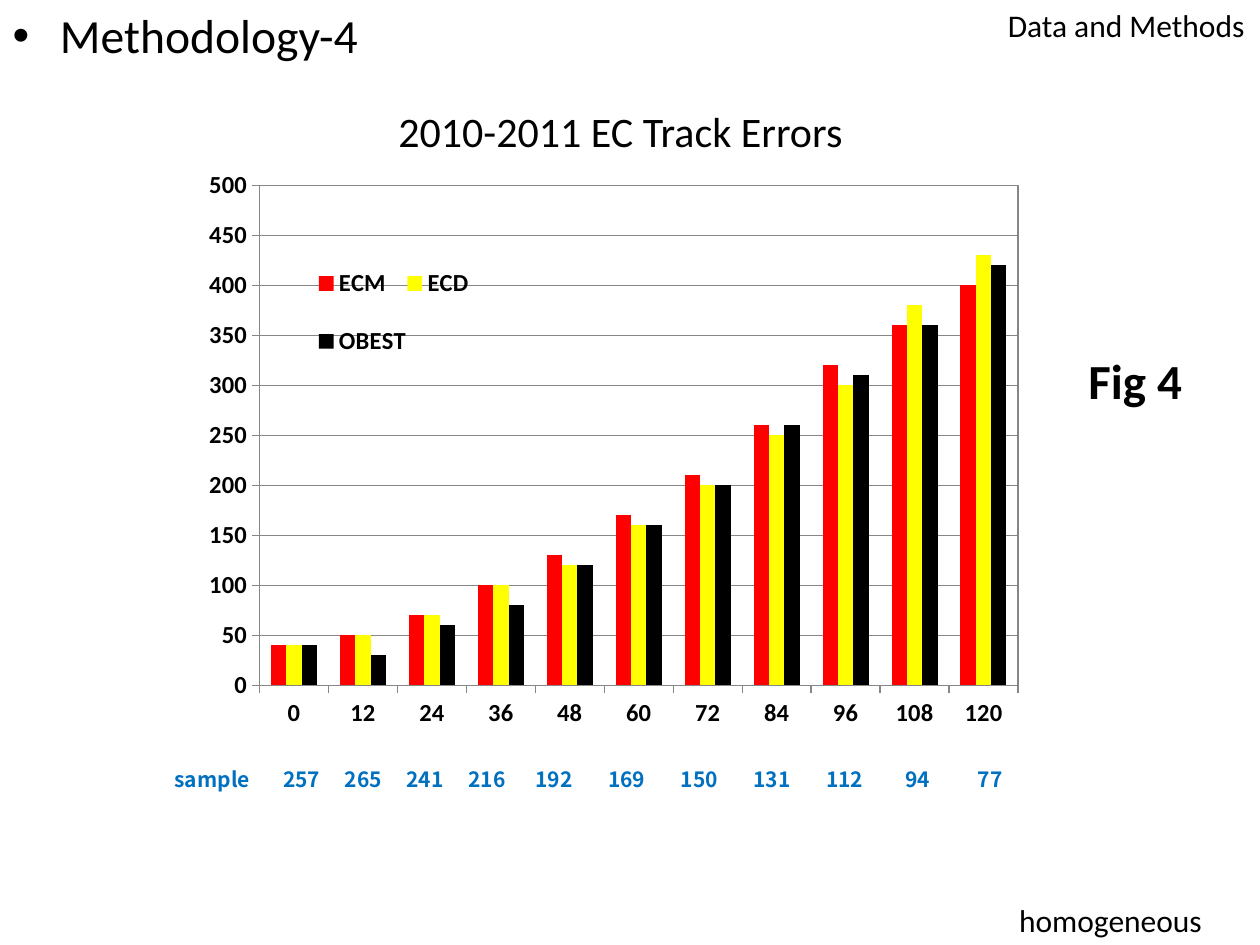
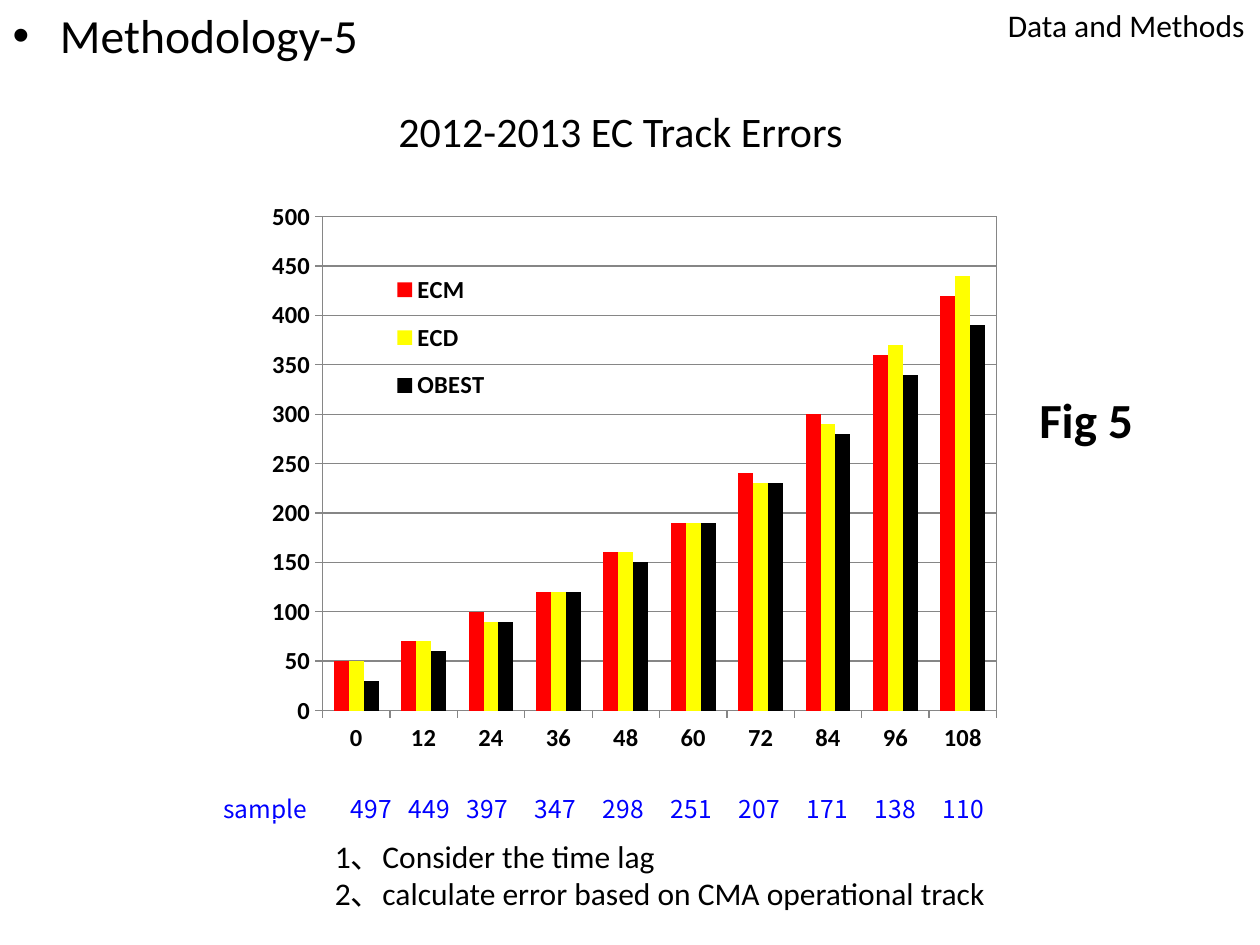
import pptx
import pptx.chart.data
import pptx.dml.color
import pptx.enum.chart
import pptx.enum.text
import pptx.oxml
import pptx.util

COLORS = {
    "ink": "000000",
    "grid": "868686",
    "ECM": "FF0000",
    "ECD": "FFFF00",
    "OBEST": "000000",
    "sample_bold": "0070C0",
    "sample_plain": "0000FF",
}
FONT = "Calibri"
TABLE_FONT = "Noto Sans CJK SC"
SECTION = "Data and Methods"
HOUR_STEP = 12
ALIGN = pptx.enum.text.PP_ALIGN

SLIDES = [
    {
        "heading": "Methodology-4",
        "title": "2010-2011 EC Track Errors",
        "figure": ("Fig 4", (8.54, 2.73, 1.02, 0.57)),
        "notes": (["homogeneous"], (7.99, 7.1, 1.73, 0.4)),
        "chart_box": (1.22, 1.15, 7.4, 5.04),
        "plot": (0.84, 0.32, 6.02, 3.97),
        "legend": (1.3, 0.76, 1.21, 1.14),
        "errors": {
            "ECM": [40, 50, 70, 100, 130, 170, 210, 260, 320, 360, 400],
            "ECD": [40, 50, 70, 100, 120, 160, 200, 250, 300, 380, 430],
            "OBEST": [40, 30, 60, 80, 120, 160, 200, 260, 310, 360, 420],
        },
        "samples": [257, 265, 241, 216, 192, 169, 150, 131, 112, 94, 77],
        "table": {"box": (1.22, 5.8, 6.93, 0.75), "label": 0.93,
                  "narrow": (4, 0.49), "size": 12, "bold": True,
                  "color": "sample_bold", "aligns": (ALIGN.CENTER, ALIGN.CENTER)},
    },
    {
        "heading": "Methodology-5",
        "title": "2012-2013 EC Track Errors",
        "figure": ("Fig 5", (8.15, 3.04, 1.02, 0.57)),
        "notes": (["1、Consider the time lag",
                   "2、calculate error based on CMA operational track"],
                  (2.56, 6.59, 5.42, 0.71)),
        "chart_box": (1.85, 1.47, 6.61, 4.78),
        "plot": (0.71, 0.25, 5.35, 3.92),
        "legend": (1.22, 0.57, 0.86, 1.28),
        "errors": {
            "ECM": [50, 70, 100, 120, 160, 190, 240, 300, 360, 420],
            "ECD": [50, 70, 90, 120, 160, 190, 230, 290, 370, 440],
            "OBEST": [30, 60, 90, 120, 150, 190, 230, 280, 340, 390],
        },
        "samples": [497, 449, 397, 347, 298, 251, 207, 171, 138, 110],
        "table": {"box": (1.77, 6.27, 6.04, 0.23), "label": 0.88,
                  "narrow": (3, 0.46), "size": 14, "bold": False,
                  "color": "sample_plain", "aligns": (ALIGN.LEFT, ALIGN.RIGHT)},
    },
]


def inches(values):
    return [pptx.util.Inches(value) for value in values]


def rgb(name):
    return pptx.dml.color.RGBColor.from_string(COLORS[name])


def style_font(font, size, bold=False, color="ink", name=FONT):
    font.name = name
    font.size = pptx.util.Pt(size)
    font.bold = bold
    font.color.rgb = rgb(color)


def style_paragraphs(frame, size, align=None, **look):
    for para in frame.paragraphs:
        para.alignment = align
        for span in para.runs:
            style_font(span.font, size, **look)


def fill_placeholder(shape, box, text, size, anchor, align=None):
    shape.left, shape.top, shape.width, shape.height = inches(box)
    frame = shape.text_frame
    frame.text = text
    frame.auto_size = pptx.enum.text.MSO_AUTO_SIZE.NONE
    frame.vertical_anchor = anchor
    style_paragraphs(frame, size, align)


def add_text(page, lines, box, size, bold=False, wrap=True):
    frame = page.shapes.add_textbox(*inches(box)).text_frame
    frame.word_wrap = wrap
    frame.text = "\n".join(lines)
    style_paragraphs(frame, size, bold=bold)


def chart_xml(tag, content):
    namespaces = pptx.oxml.ns.nsdecls("c", "a")
    return pptx.oxml.parse_xml(f"<c:{tag} {namespaces}>{content}</c:{tag}>")


def set_layout(parent, box, chart_box, position, target=""):
    for previous in parent.findall(pptx.oxml.ns.qn("c:layout")):
        parent.remove(previous)
    modes = '<c:xMode val="edge"/><c:yMode val="edge"/>'
    sizes = "".join(f'<c:{key} val="{length / whole:.4f}"/>'
                    for key, length, whole in zip("xywh", box, chart_box[2:] * 2))
    parent.insert(position, chart_xml(
        "layout", f"<c:manualLayout>{target}{modes}{sizes}</c:manualLayout>"))


def style_line(line):
    line.color.rgb = rgb("grid")
    line.width = pptx.util.Pt(0.75)


def add_error_chart(page, content):
    data = pptx.chart.data.CategoryChartData()
    data.categories = [str(HOUR_STEP * i) for i in range(len(content["samples"]))]
    for name, values in content["errors"].items():
        data.add_series(name, values)
    chart_box = content["chart_box"]
    chart = page.shapes.add_chart(
        pptx.enum.chart.XL_CHART_TYPE.COLUMN_CLUSTERED, *inches(chart_box), data).chart
    style_font(chart.font, 14, bold=True)
    chart.has_title = False

    plot = chart.plots[0]
    plot.vary_by_categories = False
    plot.gap_width = 150
    plot.overlap = 0
    for series in plot.series:
        series.format.fill.solid()
        series.format.fill.fore_color.rgb = rgb(series.name)

    for axis in (chart.category_axis, chart.value_axis):
        axis.major_tick_mark = pptx.enum.chart.XL_TICK_MARK.OUTSIDE
        style_line(axis.format.line)
    errors = chart.value_axis
    errors.minimum_scale, errors.maximum_scale, errors.major_unit = 0, 500, 50
    errors.has_major_gridlines = True
    style_line(errors.major_gridlines.format.line)

    chart.has_legend = True
    chart.legend.position = pptx.enum.chart.XL_LEGEND_POSITION.RIGHT
    chart.legend.include_in_layout = False
    style_font(chart.legend.font, 14, bold=True)
    set_layout(chart.legend._element, content["legend"], chart_box, 1)
    area = plot._element.getparent()
    set_layout(area, content["plot"], chart_box, 0, '<c:layoutTarget val="inner"/>')
    area.append(chart_xml(
        "spPr", '<a:noFill/><a:ln w="9525"><a:solidFill>'
        f'<a:srgbClr val="{COLORS["grid"]}"/></a:solidFill></a:ln>'))
    area.getparent().addnext(chart_xml("spPr", "<a:noFill/><a:ln><a:noFill/></a:ln>"))


def add_sample_table(page, samples, look):
    count, narrow = look["narrow"]
    wide_count = len(samples) - count
    wide = (look["box"][2] - look["label"] - count * narrow) / wide_count
    widths = [look["label"]] + [narrow] * count + [wide] * wide_count
    table = page.shapes.add_table(1, len(widths), *inches(look["box"])).table
    table.first_row = False
    table.horz_banding = False
    label_align, value_align = look["aligns"]
    for i, (width, value) in enumerate(zip(widths, ["sample", *samples])):
        table.columns[i].width = pptx.util.Inches(width)
        cell = table.cell(0, i)
        cell.fill.background()
        cell.margin_left = cell.margin_right = cell.margin_top = cell.margin_bottom = 0
        cell.vertical_anchor = pptx.enum.text.MSO_ANCHOR.MIDDLE
        cell.text_frame.text = str(value)
        style_paragraphs(cell.text_frame, look["size"], value_align if i else label_align,
                         bold=look["bold"], color=look["color"], name=TABLE_FONT)


def add_page(deck, content):
    page = deck.slides.add_slide(deck.slide_layouts[1])
    anchors = pptx.enum.text.MSO_ANCHOR
    fill_placeholder(page.placeholders[1], (0, 0, 3.23, 0.94), content["heading"],
                     27.2, anchors.TOP)
    fill_placeholder(page.shapes.title, (2.09, 0.6, 5.67, 0.87), content["title"],
                     24, anchors.MIDDLE, ALIGN.CENTER)
    add_text(page, [SECTION], (7.9, 0, 2.1, 0.4), 18, wrap=False)
    add_error_chart(page, content)
    add_sample_table(page, content["samples"], content["table"])
    figure, figure_box = content["figure"]
    add_text(page, [figure], figure_box, 28, bold=True)
    notes, notes_box = content["notes"]
    add_text(page, notes, notes_box, 18)


def main():
    deck = pptx.Presentation()
    deck.slide_width, deck.slide_height = inches((10, 7.5))
    for content in SLIDES:
        add_page(deck, content)
    deck.save("out.pptx")


if __name__ == "__main__":
    main()
